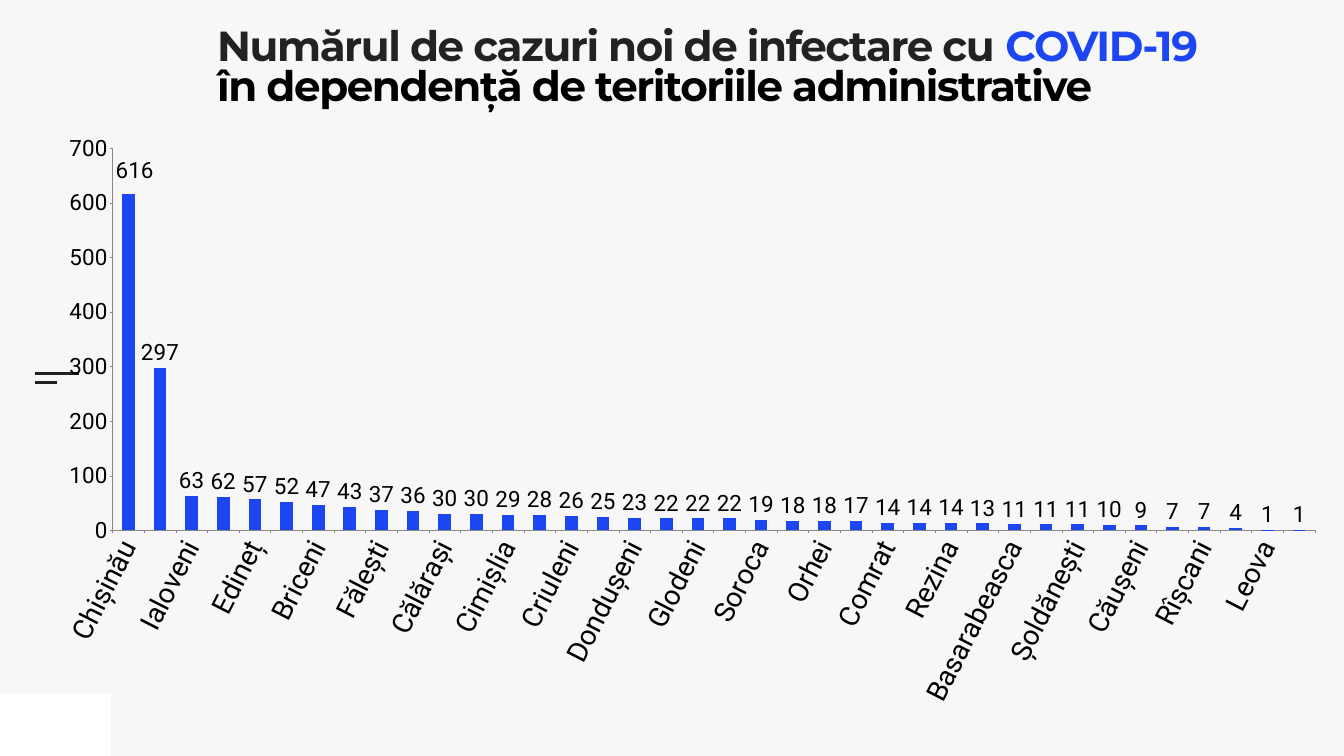
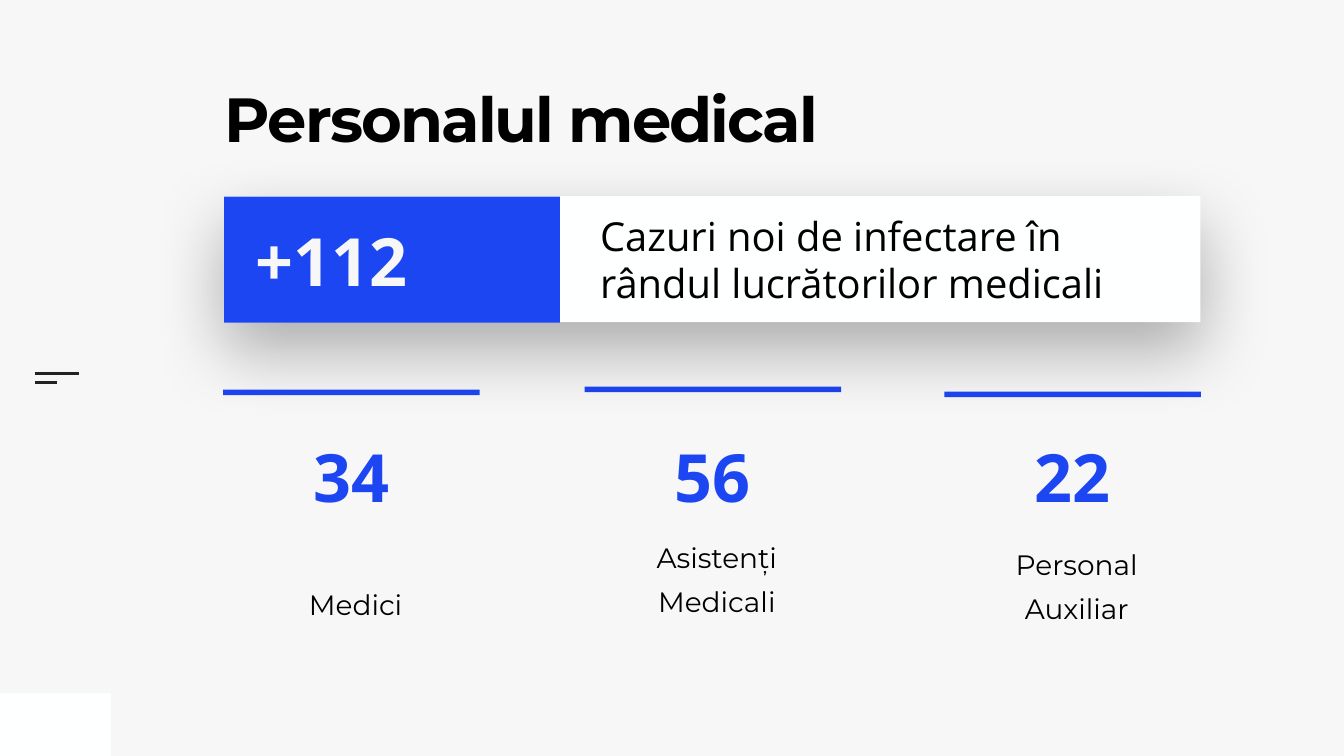
from lxml import etree
from pptx import Presentation
from pptx.chart.data import CategoryChartData
from pptx.dml.color import RGBColor
from pptx.enum.chart import XL_CHART_TYPE as ChartType, XL_LABEL_POSITION as LabelPos, XL_TICK_MARK as Tick
from pptx.enum.shapes import MSO_CONNECTOR as Connector, MSO_SHAPE as Shape
from pptx.enum.text import MSO_ANCHOR as Anchor, PP_ALIGN as Align
from pptx.oxml import parse_xml
from pptx.oxml.ns import nsdecls, qn
from pptx.util import Inches, Pt

BACKGROUND, WHITE, DARK, BLACK, BLUE = "F7F7F7", "FEFFFF", "222222", "000000", "1D46F3"
TITLE_FONT, TEXT_FONT, CHART_FONT = "Montserrat", "Open Sans", "Roboto"

CASES_TITLE = [
    [("Numărul de cazuri noi de infectare cu ", DARK), ("COVID-19", BLUE)],
    [("în dependență de teritoriile administrative", BLACK)],
]
CASES = [
    ("Chișinău", 616), ("Transnistria", 297), ("Ialoveni", 63), ("Bălți", 62),
    ("Edineț", 57), ("Anenii Noi", 52), ("Briceni", 47), ("Strășeni", 43),
    ("Fălești", 37), ("Cahul", 36), ("Călărași", 30), ("Ungheni", 30),
    ("Cimișlia", 29), ("Ștefan Vodă", 28), ("Criuleni", 26), ("Sîngerei", 25),
    ("Dondușeni", 23), ("Drochia", 22), ("Glodeni", 22), ("Telenești", 22),
    ("Soroca", 19), ("Hîncești", 18), ("Orhei", 18), ("Ocnița", 17),
    ("Comrat", 14), ("Dubăsari", 14), ("Rezina", 14), ("Taraclia", 13),
    ("Basarabeasca", 11), ("Florești", 11), ("Șoldănești", 11), ("Ceadîr-Lunga", 10),
    ("Căușeni", 9), ("Cantemir", 7), ("Rîșcani", 7), ("Vulcănești", 4),
    ("Leova", 1), ("Nisporeni", 1),
]
PLOT_AREA = {"layoutTarget": "inner", "xMode": "edge", "yMode": "edge",
             "x": 0.045, "y": 0.022, "w": 0.948, "h": 0.64}
FIRST_LABEL_SHIFT = {"x": 0.005, "y": -0.014}
DISTRICT_ANGLE = -63

STAFF_TITLE = [[("Personalul medical", BLACK)]]
STAFF_TOTAL = "+112"
STAFF_CAPTION = "Cazuri noi de infectare în rândul lucrătorilor medicali"
STAFF_GROUPS = [
    ("34", "Medici", 4.43, 7.73, 7.73),
    ("56", "Asistenți Medicali", 11.6, 7.67, 7.67),
    ("22", "Personal Auxiliar", 18.74, 7.81, 7.77),
]
CARD_WIDTH, CARD_HEIGHT, RULE_HEIGHT = 5.09, 5.46, 0.11
BIG_NUMBER = {"size": 95, "font": TEXT_FONT, "bold": True}


def rgb(color):
    return RGBColor.from_string(color)


def write(shape, lines, size, font, color=BLACK, bold=False, tracking=0, align=Align.LEFT,
          anchor=Anchor.TOP, insets=(0.1, 0.1, 0.1, 0.1), spacing=None, before=0):
    frame = shape.text_frame
    frame.word_wrap = True
    frame.vertical_anchor = anchor
    frame.margin_left, frame.margin_top, frame.margin_right, frame.margin_bottom = map(Inches, insets)
    if isinstance(lines, str):
        lines = [[(lines, color)]]
    for index, pieces in enumerate(lines):
        paragraph = frame.add_paragraph() if index else frame.paragraphs[0]
        paragraph.alignment = align
        paragraph.line_spacing = spacing
        paragraph.space_before = Pt(before)
        for words, ink in pieces:
            run = paragraph.add_run()
            run.text = words
            run.font.size, run.font.name, run.font.bold = Pt(size), font, bold
            run.font.color.rgb = rgb(ink)
            if tracking:
                run.font._element.set("spc", str(round(tracking * 100)))


def add_title(slide, box, lines, size, tracking):
    write(slide.shapes.add_textbox(*map(Inches, box)), lines, size=size, font=TITLE_FONT,
          bold=True, tracking=tracking, insets=(0, 0, 0, 0), spacing=0.8)


def add_outlined_text(slide, box, words, **style):
    left, top, width, height = map(Inches, box)
    outline = slide.shapes.build_freeform(left, top)
    outline.add_line_segments(
        [(left + width, top), (left + width, top + height), (left, top + height)])
    panel = outline.convert_to_shape()
    panel.shadow.inherit = False
    panel.fill.background()
    panel.line.fill.background()
    write(panel, words, anchor=Anchor.MIDDLE, **style)


def add_block(slide, box, color):
    block = slide.shapes.add_shape(Shape.RECTANGLE, *map(Inches, box))
    block.shadow.inherit = False
    block.fill.solid()
    block.fill.fore_color.rgb = rgb(color)
    block.line.fill.background()
    return block


def add_soft_shadow(block):
    effects = block._element.spPr.find(qn("a:effectLst"))
    effects.append(parse_xml(
        f'<a:outerShdw {nsdecls("a")} blurRad="{Pt(100)}" dist="{Pt(40)}" dir="5400000" '
        f'algn="ctr" rotWithShape="0"><a:srgbClr val="{BLACK}"><a:alpha val="30000"/>'
        '</a:srgbClr></a:outerShdw>'))


def add_slide(deck):
    slide = deck.slides.add_slide(deck.slide_layouts[6])
    slide.background.fill.solid()
    slide.background.fill.fore_color.rgb = rgb(BACKGROUND)
    add_block(slide, (0, 13.76, 2.2, 1.24), WHITE)
    for right, y in ((1.57, 7.41), (1.13, 7.59)):
        dash = slide.shapes.add_connector(Connector.STRAIGHT, *map(Inches, (0.69, y, right, y)))
        dash.line.color.rgb = rgb(DARK)
        dash.line.width = Pt(3)
        etree.SubElement(dash._element.spPr, qn("a:effectLst"))
    return slide


def set_font(font, size):
    font.size, font.name, font.bold = Pt(size), CHART_FONT, False
    font.color.rgb = rgb(BLACK)


def set_layout(parent, position, settings):
    for old in parent.findall(qn("c:layout")):
        parent.remove(old)
    values = "".join(f'<c:{key} val="{value}"/>' for key, value in settings.items())
    parent.insert(position, parse_xml(
        f'<c:layout {nsdecls("c")}><c:manualLayout>{values}</c:manualLayout></c:layout>'))


def add_cases_chart(slide):
    cases = CategoryChartData(number_format="General")
    cases.categories = [district for district, count in CASES]
    cases.add_series("Series 1", [count for district, count in CASES])
    chart = slide.shapes.add_chart(
        ChartType.COLUMN_CLUSTERED, *map(Inches, (1.1, 2.68, 25.17, 11.85)), cases).chart
    chart.has_legend = chart.has_title = False
    set_font(chart.font, 40)
    set_layout(chart._chartSpace.chart.plotArea, 0, PLOT_AREA)

    for axis, size in ((chart.category_axis, 40), (chart.value_axis, 32)):
        axis.has_major_gridlines = False
        axis.major_tick_mark = Tick.OUTSIDE
        axis.minor_tick_mark = Tick.NONE
        axis.format.line.color.rgb = rgb("888888")
        axis.format.line.width = Pt(0.75)
        set_font(axis.tick_labels.font, size)
    district_text = chart.category_axis._element.txPr.find(qn("a:bodyPr"))
    district_text.set("rot", str(DISTRICT_ANGLE * 60000))
    chart.value_axis.minimum_scale = 0
    chart.value_axis.maximum_scale = 700
    chart.value_axis.major_unit = 100

    columns = chart.plots[0]
    columns.gap_width = 150
    columns.vary_by_categories = False
    bars = columns.series[0]
    bars.invert_if_negative = False
    bars.format.fill.solid()
    bars.format.fill.fore_color.rgb = rgb(BLUE)
    bars.data_labels.show_value = True
    first_label = bars.points[0].data_label
    for labels in (bars.data_labels, first_label):
        labels.position = LabelPos.OUTSIDE_END
        set_font(labels.font, 32)
    set_layout(bars.data_labels._element.find(qn("c:dLbl")), 1, FIRST_LABEL_SHIFT)


def build_cases(deck):
    slide = add_slide(deck)
    add_title(slide, (4.31, 0.58, 20.02, 2.73), CASES_TITLE, 60, -2)
    add_cases_chart(slide)


def build_staff(deck):
    slide = add_slide(deck)
    for number, role, left, top, rule_top in STAFF_GROUPS:
        card = add_block(slide, (left, top, CARD_WIDTH, CARD_HEIGHT), BACKGROUND)
        write(card, role, size=40, font=TITLE_FONT, align=Align.CENTER, anchor=Anchor.BOTTOM,
              insets=(0.55, 0.71, 0.39, 0.87), spacing=1.3, before=20)
        add_block(slide, (left, rule_top, CARD_WIDTH, RULE_HEIGHT), BLUE)

    add_title(slide, (4.46, 1.87, 13.01, 2.73), STAFF_TITLE, 89, -2.7)
    add_soft_shadow(add_block(slide, (4.45, 3.89, 19.37, 2.5), WHITE))
    add_outlined_text(slide, (11.81, 4.08, 11.76, 2.12), STAFF_CAPTION, size=57, font=TEXT_FONT)
    add_block(slide, (4.45, 3.9, 6.66, 2.5), BLUE)
    add_outlined_text(slide, (4.98, 4.25, 6.03, 1.8), STAFF_TOTAL, color=BACKGROUND, **BIG_NUMBER)

    for number, role, left, top, rule_top in STAFF_GROUPS:
        add_outlined_text(slide, (left, 8.54, CARD_WIDTH, 1.8), number, color=BLUE,
                          align=Align.CENTER, **BIG_NUMBER)


def main():
    deck = Presentation()
    deck.slide_width, deck.slide_height = Inches(26.67), Inches(15)
    build_cases(deck)
    build_staff(deck)
    deck.save("out.pptx")


if __name__ == "__main__":
    main()
